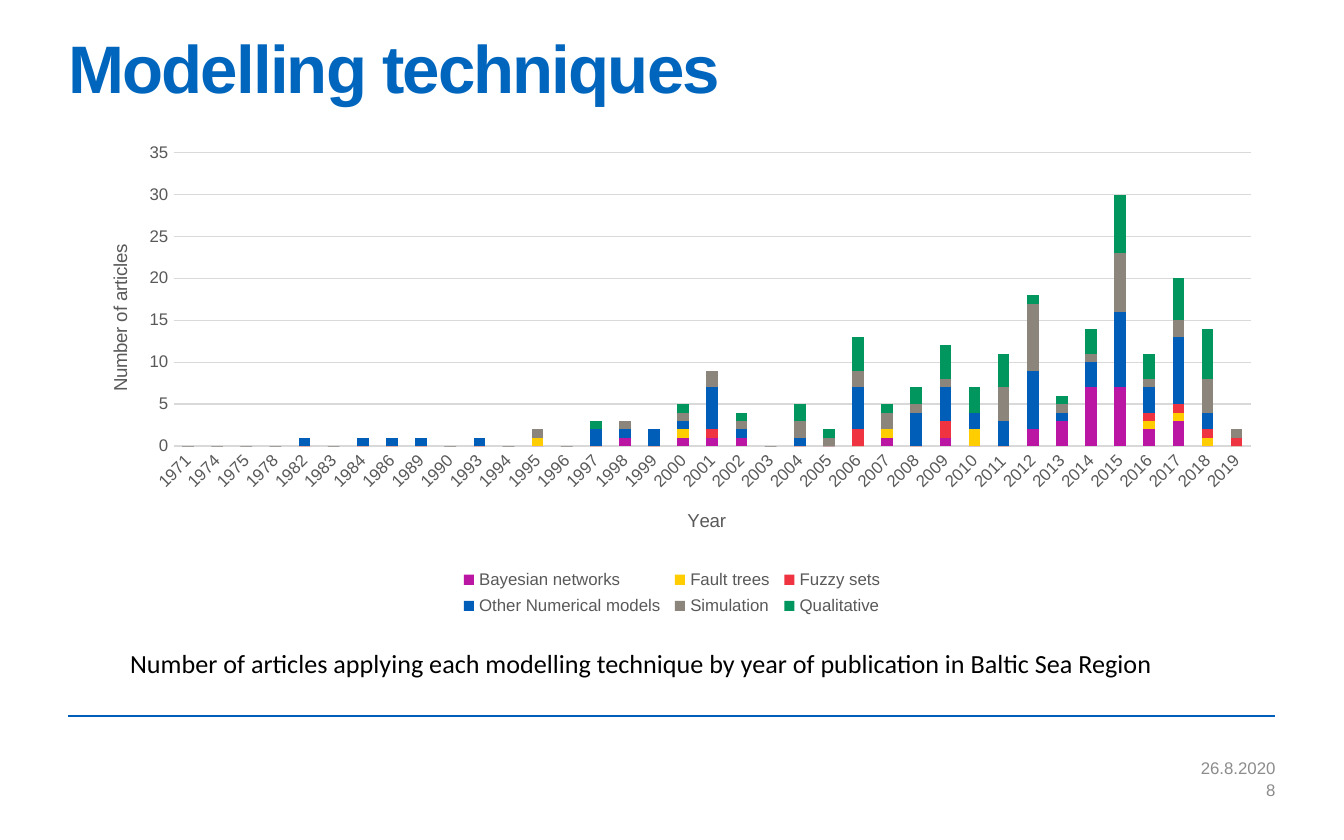
"""Build the slide that charts modelling techniques by year of publication."""
from dataclasses import dataclass
from typing import NamedTuple

from lxml import etree
from pptx import Presentation
from pptx import util as u
from pptx.chart import data as chart_data
from pptx.dml.color import RGBColor
from pptx.enum import chart as charts, shapes, text
from pptx.oxml import ns


@dataclass(frozen=True)
class Theme:
    """Colours, fonts and type sizes of the slide."""
    title: str = "0065BD"
    rule: str = "005EB8"
    label: str = "595959"
    grid: str = "D9D9D9"
    footer: str = "8C8C8C"
    body: str = "000000"
    sans: str = "Arial"
    caption_font: str = "Calibri"
    title_size: float = 36
    caption_size: float = 14
    axis_title_size: float = 10
    small_size: float = 9


class Frame(NamedTuple):
    """A rectangle, in points on the page or in fractions of a chart."""
    left: float
    top: float
    width: float
    height: float


class Technique(NamedTuple):
    """One series of yearly article counts."""
    name: str
    colour: str
    counts: list[int]


class Label(NamedTuple):
    """A line of text with its place and look."""
    words: str
    frame: Frame
    font: str
    size: float
    colour: str
    align: text.PP_ALIGN
    anchor: text.MSO_ANCHOR
    insets: tuple[float, float, float, float]


THEME = Theme()
MARGIN, CONTENT = 36.7, 646.6
FOOTER_INSETS = (7.2, 3.6, 0, 3.6)

YEARS = [1971, 1974, 1975, 1978, 1982, 1983, 1984, 1986, 1989, 1990,
         *range(1993, 2020)]

TECHNIQUES = [
    Technique("Bayesian networks", "BB16A3",
              [0] * 15 + [1, 0, 1, 1, 1, 0, 0, 0, 0, 1, 0, 1, 0, 0, 2, 3, 7, 7, 2, 3, 0, 0]),
    Technique("Fault trees", "FFCD00",
              [0] * 12 + [1, 0, 0, 0, 0, 1, 0, 0, 0, 0, 0, 0, 1, 0, 0, 2,
                          0, 0, 0, 0, 0, 1, 1, 1, 0]),
    Technique("Fuzzy sets", "EF3340",
              [0] * 18 + [1, 0, 0, 0, 0, 2, 0, 0, 2, 0, 0, 0, 0, 0, 0, 1, 1, 1, 1]),
    Technique("Other Numerical models", "005EB8",
              [0, 0, 0, 0, 1, 0, 1, 1, 1, 0, 1, 0, 0, 0, 2, 1, 2, 1, 5, 1, 0, 1,
               0, 5, 0, 4, 4, 2, 3, 7, 1, 3, 9, 3, 8, 2, 0]),
    Technique("Simulation", "8C857B",
              [0] * 12 + [1, 0, 0, 1, 0, 1, 2, 1, 0, 2, 1, 2, 2, 1, 1, 0,
                          4, 8, 1, 1, 7, 1, 2, 4, 1]),
    Technique("Qualitative", "00965E",
              [0] * 14 + [1, 0, 0, 1, 0, 1, 0, 2, 1, 4, 1, 2, 4, 3, 4, 1, 1, 3, 7, 3, 5, 6, 0]),
]

LABELS = [
    Label("26.8.2020", Frame(398.3, 405.4, 285, 12.2), THEME.sans, THEME.small_size,
          THEME.footer, text.PP_ALIGN.RIGHT, text.MSO_ANCHOR.MIDDLE, FOOTER_INSETS),
    Label("8", Frame(398.3, 417.6, 285, 10.8), THEME.sans, THEME.small_size,
          THEME.footer, text.PP_ALIGN.RIGHT, text.MSO_ANCHOR.MIDDLE, FOOTER_INSETS),
    Label("Number of articles applying each modelling technique by year of publication"
          " in Baltic Sea Region", Frame(62.6, 343.4, 595.4, 24.5), THEME.caption_font,
          THEME.caption_size, THEME.body, text.PP_ALIGN.LEFT, text.MSO_ANCHOR.TOP,
          (7.2, 3.6, 7.2, 3.6)),
]


def points(frame: Frame) -> list[u.Length]:
    """Return the sides of a frame as lengths."""
    return [u.Pt(side) for side in frame]


def style_font(font, name: str, size: float, colour: str, bold: bool = False) -> None:
    """Set the look of a font."""
    font.name, font.size, font.bold = name, u.Pt(size), bold
    font.color.rgb = RGBColor.from_string(colour)


def set_insets(frame, insets: tuple[float, float, float, float]) -> None:
    """Set the left, top, right and bottom insets of a text frame."""
    (frame.margin_left, frame.margin_top,
     frame.margin_right, frame.margin_bottom) = map(u.Pt, insets)


def style_line(line, colour: str, width: float) -> None:
    """Set the colour and width of a line."""
    line.color.rgb = RGBColor.from_string(colour)
    line.width = u.Pt(width)


def add_title(page, words: str) -> None:
    """Move, fill and format the title placeholder."""
    box = page.shapes.title
    box.left, box.top, box.width, box.height = points(Frame(MARGIN, 20.9, CONTENT, 78.5))
    frame = box.text_frame
    frame.text = words
    frame.vertical_anchor = text.MSO_ANCHOR.TOP
    frame.auto_size = text.MSO_AUTO_SIZE.NONE
    set_insets(frame, (0, 0, 0, 0))
    para = frame.paragraphs[0]
    para.alignment, para.line_spacing = text.PP_ALIGN.LEFT, 0.85
    span = para.runs[0]
    style_font(span.font, THEME.sans, THEME.title_size, THEME.title, bold=True)
    span.font._element.set("spc", "-100")


def add_label(page, label: Label) -> None:
    """Add one line of text."""
    frame = page.shapes.add_textbox(*points(label.frame)).text_frame
    frame.word_wrap = True
    frame.vertical_anchor = label.anchor
    set_insets(frame, label.insets)
    frame.text = label.words
    para = frame.paragraphs[0]
    para.alignment = label.align
    style_font(para.runs[0].font, label.font, label.size, label.colour)


def add_rule(page, height: float) -> None:
    """Add the horizontal rule above the footer."""
    rule = page.shapes.add_connector(
        shapes.MSO_CONNECTOR.STRAIGHT, u.Pt(MARGIN), u.Pt(height),
        u.Pt(MARGIN + CONTENT), u.Pt(height))
    style_line(rule.line, THEME.rule, 1)
    etree.SubElement(rule._element.spPr, ns.qn("a:effectLst"))


def place(element, index: int, **settings: object) -> None:
    """Give a chart part a manual layout as its child at the index."""
    for old in element.findall(ns.qn("c:layout")):
        element.remove(old)
    layout = etree.Element(ns.qn("c:layout"))
    manual = etree.SubElement(layout, ns.qn("c:manualLayout"))
    for name, value in settings.items():
        etree.SubElement(manual, ns.qn(f"c:{name}")).set("val", str(value))
    element.insert(index, layout)


def style_axis(axis, words: str, rotation: int, left: float, top: float) -> None:
    """Title an axis and format its labels."""
    axis.major_tick_mark = axis.minor_tick_mark = charts.XL_TICK_MARK.NONE
    style_font(axis.tick_labels.font, THEME.sans, THEME.small_size, THEME.label)
    title = axis.axis_title
    title.text_frame.text = words
    title.text_frame._txBody.bodyPr.set("rot", str(rotation))
    style_font(title.text_frame.paragraphs[0].runs[0].font, THEME.sans,
               THEME.axis_title_size, THEME.label)
    place(title._element, 1, xMode="edge", yMode="edge", x=left, y=top)


def add_article_chart(page, techniques: list[Technique]) -> None:
    """Add the stacked columns of articles per year."""
    data = chart_data.CategoryChartData()
    data.categories = [str(year) for year in YEARS]
    for technique in techniques:
        data.add_series(technique.name, technique.counts)
    chart = page.shapes.add_chart(
        charts.XL_CHART_TYPE.COLUMN_STACKED,
        *points(Frame(MARGIN, 71.3, CONTENT, 262.1)), data).chart
    chart.has_title = False
    style_font(chart.font, THEME.sans, THEME.axis_title_size, THEME.body)
    plot = chart.plots[0]
    plot.gap_width, plot.overlap, plot.vary_by_categories = 150, 100, False
    for series, technique in zip(plot.series, techniques):
        series.format.fill.solid()
        series.format.fill.fore_color.rgb = RGBColor.from_string(technique.colour)

    years, articles = chart.category_axis, chart.value_axis
    style_axis(years, "Year", 0, 0.51, 0.76)
    years.tick_labels.font._element.getparent().getparent().getparent().find(
        ns.qn("a:bodyPr")).set("rot", "-2700000")
    style_line(years.format.line, THEME.grid, 0.75)
    style_axis(articles, "Number of articles", -5400000, 0.03, 0.22)
    articles.minimum_scale, articles.maximum_scale, articles.major_unit = 0, 35, 5
    articles.format.line.fill.background()
    style_line(articles.major_gridlines.format.line, THEME.grid, 0.75)

    chart.has_legend = True
    legend = chart.legend
    legend.position, legend.include_in_layout = charts.XL_LEGEND_POSITION.BOTTOM, False
    style_font(legend.font, THEME.sans, THEME.small_size, THEME.label)
    place(legend._element, 1, xMode="edge", yMode="edge", x=0.32, y=0.88, w=0.36, h=0.12)
    place(chart._chartSpace.chart.plotArea, 0, layoutTarget="inner", xMode="edge",
          yMode="edge", x=0.087, y=0.04, w=0.893, h=0.6)


def main() -> None:
    """Build and save the deck."""
    deck = Presentation()
    deck.slide_width, deck.slide_height = u.Pt(720), u.Pt(450)
    page = deck.slides.add_slide(deck.slide_layouts[5])
    add_rule(page, 383.8)
    add_title(page, "Modelling techniques")
    add_article_chart(page, TECHNIQUES)
    for label in LABELS:
        add_label(page, label)
    deck.save("out.pptx")


if __name__ == "__main__":
    main()
